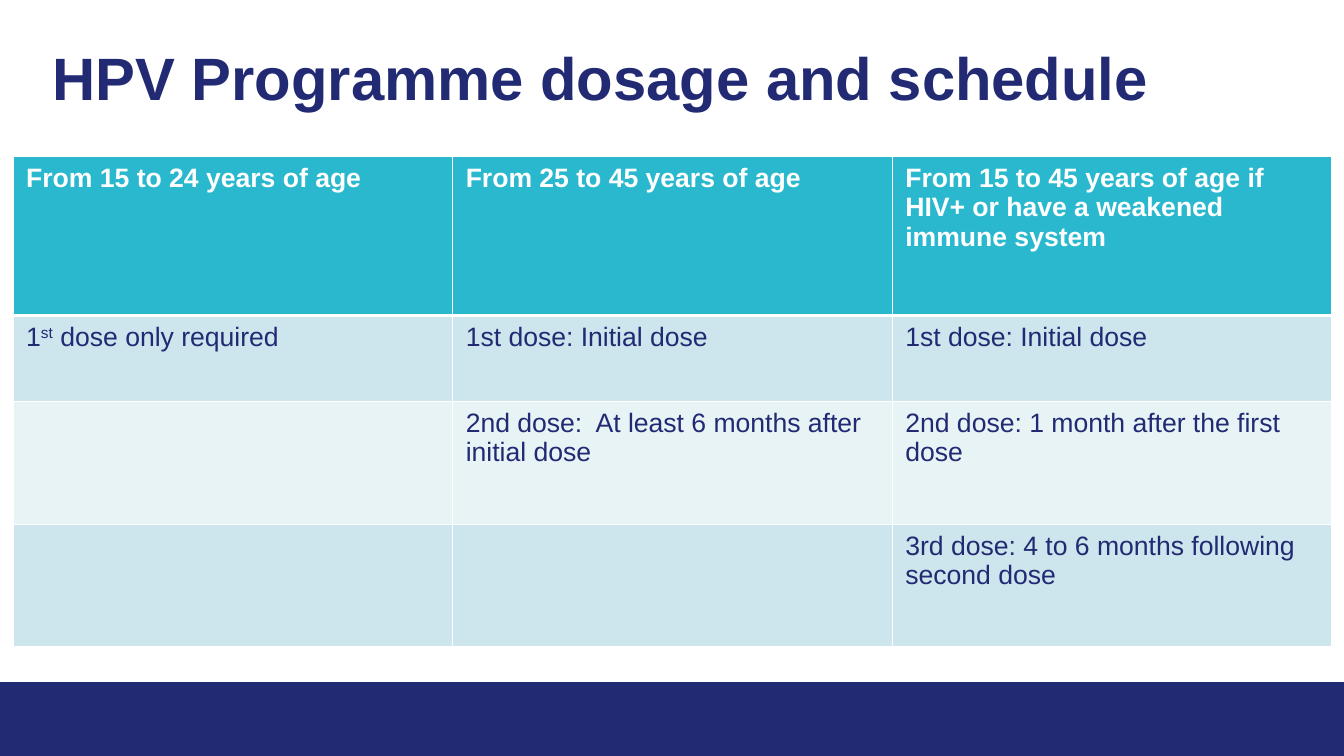
from lxml import etree
from pptx import Presentation
from pptx import util as u
from pptx.dml.color import RGBColor
from pptx.enum import shapes, text
from pptx.oxml.ns import qn

NAVY = RGBColor(0x21, 0x2A, 0x73)
TEAL = RGBColor(0x29, 0xB8, 0xCE)
PALE = RGBColor(0xCD, 0xE6, 0xED)
PALER = RGBColor(0xE8, 0xF3, 0xF6)
WHITE = RGBColor(0xFF, 0xFF, 0xFF)

# A cell is a string, or a list of (text, superscript) pairs
SCHEDULE = [
    ["From 15 to 24 years of age", "From 25 to 45 years of age",
     "From 15 to 45 years of age if HIV+ or have a weakened immune system"],
    [[("1", False), ("st", True), (" dose only required", False)],
     "1st dose: Initial dose", "1st dose: Initial dose"],
    ["", "2nd dose:  At least 6 months after initial dose",
     "2nd dose: 1 month after the first dose"],
    ["", "", "3rd dose: 4 to 6 months following second dose"],
]
ROW_HEIGHTS = [1.58, 0.85, 1.22, 1.22]
COLUMN_WIDTH = 4.36


def add_text(p, content, size=19, color=NAVY, bold=False, superscript=False):
    r = p.add_run()
    r.text = content
    r.font.name = "Arial"
    r.font.size = u.Pt(size)
    r.font.bold = bold
    r.font.color.rgb = color
    if superscript:
        r._r.get_or_add_rPr().set("baseline", "30000")


def set_borders(cell, bottom=1):
    """Draw white cell borders; they must come before the cell's fill."""
    tcPr = cell._tc.get_or_add_tcPr()
    widths = {"a:lnL": 1, "a:lnR": 1, "a:lnT": 1, "a:lnB": bottom}
    for i, (tag, width) in enumerate(widths.items()):
        ln = etree.Element(qn(tag), w=str(u.Pt(width)))
        fill = etree.SubElement(ln, qn("a:solidFill"))
        etree.SubElement(fill, qn("a:srgbClr"), val=str(WHITE))
        tcPr.insert(i, ln)


class Deck:
    def __init__(self):
        self.prs = Presentation()
        self.prs.slide_width = u.Inches(13.33)
        self.prs.slide_height = u.Inches(7.5)
        self.s = self.prs.slides.add_slide(self.prs.slide_layouts[5])

    def band(self, *box, color=NAVY):
        sp = self.s.shapes.add_shape(shapes.MSO_SHAPE.RECTANGLE, *map(u.Inches, box))
        sp.shadow.inherit = False
        sp.fill.solid()
        sp.fill.fore_color.rgb = color
        sp.line.color.rgb = color
        sp.line.width = u.Pt(1)

    def title(self, content, *box):
        sp = self.s.shapes.title
        sp.left, sp.top, sp.width, sp.height = map(u.Inches, box)
        tf = sp.text_frame
        tf.word_wrap = True
        tf.auto_size = text.MSO_AUTO_SIZE.NONE
        tf.vertical_anchor = text.MSO_ANCHOR.TOP
        p = tf.paragraphs[0]
        p.alignment = text.PP_ALIGN.LEFT
        p.line_spacing = 0.9
        add_text(p, content, size=42.7, bold=True)

    def table(self, rows, left, top):
        columns = len(rows[0])
        table = self.s.shapes.add_table(
            len(rows), columns, u.Inches(left), u.Inches(top),
            u.Inches(COLUMN_WIDTH * columns), u.Inches(sum(ROW_HEIGHTS))).table
        for column in table.columns:
            column.width = u.Inches(COLUMN_WIDTH)
        for i, row in enumerate(rows):
            table.rows[i].height = u.Inches(ROW_HEIGHTS[i])
            for j, content in enumerate(row):
                self.cell(table.cell(i, j), content, i)

    def cell(self, cell, content, row):
        header = row == 0
        cell.margin_left = cell.margin_right = u.Inches(0.13)
        cell.margin_top = cell.margin_bottom = u.Inches(0.07)
        cell.fill.solid()
        cell.fill.fore_color.rgb = TEAL if header else PALE if row % 2 else PALER
        set_borders(cell, bottom=3 if header else 1)
        parts = [(content, False)] if isinstance(content, str) else content
        for part, superscript in parts:
            if part:
                add_text(cell.text_frame.paragraphs[0], part, bold=header,
                         color=WHITE if header else NAVY, superscript=superscript)


def main():
    deck = Deck()
    # Footer band
    deck.band(0, 6.77, 13.33, 0.73)
    # Heading
    deck.title("HPV Programme dosage and schedule", 0.42, 0.43, 12.8, 1.01)
    # Dose schedule
    deck.table(SCHEDULE, 0.13, 1.55)
    deck.prs.save("out.pptx")


if __name__ == "__main__":
    main()
